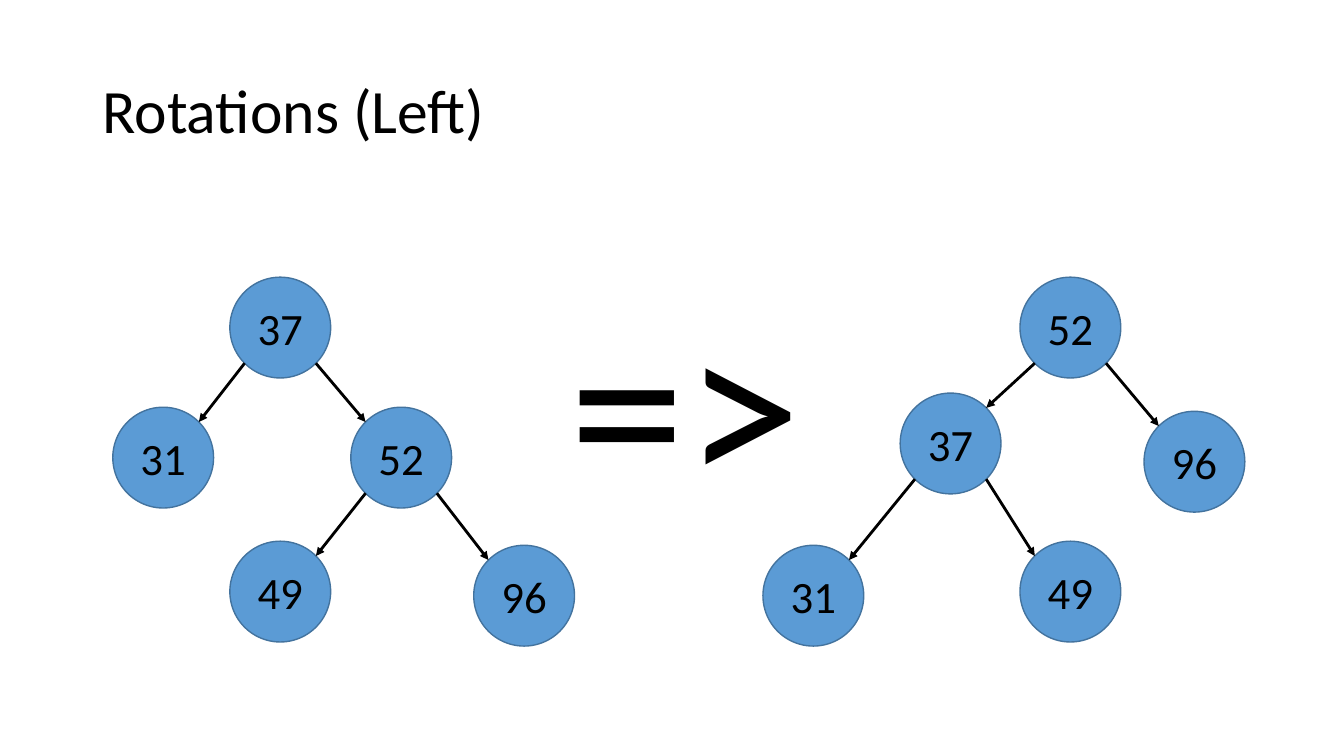
from math import sqrt
from lxml import etree
from pptx import Presentation
from pptx.dml.color import RGBColor
from pptx.enum import shapes, text
from pptx.oxml import ns
from pptx.util import Pt

TITLE = "Rotations (Left)"
SYMBOL = "=>"
FONT = "Calibri"
BLACK, BLUE, DARK_BLUE = "000000", "5B9BD5", "43739E"
DIAMETER = 72
TREES = [
    {
        "nodes": {
            "37": (164.2, 198), "52": (250.6, 290.9), "96": (338.4, 389.5),
            "31": (80.6, 290.9), "49": (164.2, 386.6),
        },
        "edges": [("37", "31"), ("37", "52"), ("52", "49"), ("52", "96")],
    },
    {
        "nodes": {
            "37": (643, 280.8), "52": (728.6, 198), "96": (817.2, 293.8),
            "31": (545, 389.5), "49": (728.6, 386.6),
        },
        "edges": [("52", "37"), ("52", "96"), ("37", "31"), ("37", "49")],
    },
]


def color(value):
    return RGBColor.from_string(value)


def write(shape, content, size, alignment):
    shape.text_frame.text = content
    para = shape.text_frame.paragraphs[0]
    para.alignment = alignment
    para.font.name = FONT
    para.font.size = Pt(size)
    para.font.color.rgb = color(BLACK)
    return para


def add_node(page, label, left, top):
    node = page.shapes.add_shape(
        shapes.MSO_SHAPE.OVAL, Pt(left), Pt(top), Pt(DIAMETER), Pt(DIAMETER))
    node.shadow.inherit = False
    node.fill.solid()
    node.fill.fore_color.rgb = color(BLUE)
    node.line.color.rgb = color(DARK_BLUE)
    node.line.width = Pt(1)
    node.text_frame.vertical_anchor = text.MSO_ANCHOR.MIDDLE
    write(node, label, 32, text.PP_ALIGN.CENTER)


def add_arrow(page, parent, child):
    radius = DIAMETER / 2
    diagonal = radius / sqrt(2)
    side = 1 if child[0] > parent[0] else -1
    start_x = parent[0] + radius + side * diagonal
    start_y = parent[1] + radius + diagonal
    end_x = child[0] + radius - side * diagonal
    end_y = child[1] + radius - diagonal
    arrow = page.shapes.add_connector(
        shapes.MSO_CONNECTOR.STRAIGHT,
        Pt(start_x), Pt(start_y), Pt(end_x), Pt(end_y))
    arrow.line.color.rgb = color(BLACK)
    arrow.line.width = Pt(2)
    etree.SubElement(arrow.line._get_or_add_ln(), ns.qn("a:tailEnd"), type="triangle")
    etree.SubElement(arrow._element.spPr, ns.qn("a:effectLst"))


def main():
    deck = Presentation()
    deck.slide_width, deck.slide_height = Pt(960), Pt(540)
    page = deck.slides.add_slide(deck.slide_layouts[5])

    title = page.shapes.title
    title.left, title.top, title.width, title.height = Pt(66), Pt(28.8), Pt(828), Pt(104.4)
    title.text_frame.vertical_anchor = text.MSO_ANCHOR.MIDDLE
    title.text_frame.auto_size = text.MSO_AUTO_SIZE.NONE
    write(title, TITLE, 44, text.PP_ALIGN.LEFT).line_spacing = 0.9

    for tree in TREES:
        nodes = tree["nodes"]
        for label, (left, top) in nodes.items():
            add_node(page, label, left, top)
        for parent, child in tree["edges"]:
            add_arrow(page, nodes[parent], nodes[child])

    box = page.shapes.add_textbox(Pt(399.6), Pt(180.7), Pt(181.4), Pt(208))
    box.text_frame.word_wrap = False
    box.text_frame.auto_size = text.MSO_AUTO_SIZE.SHAPE_TO_FIT_TEXT
    write(box, SYMBOL, 166, text.PP_ALIGN.LEFT)

    deck.save("out.pptx")


if __name__ == "__main__":
    main()
